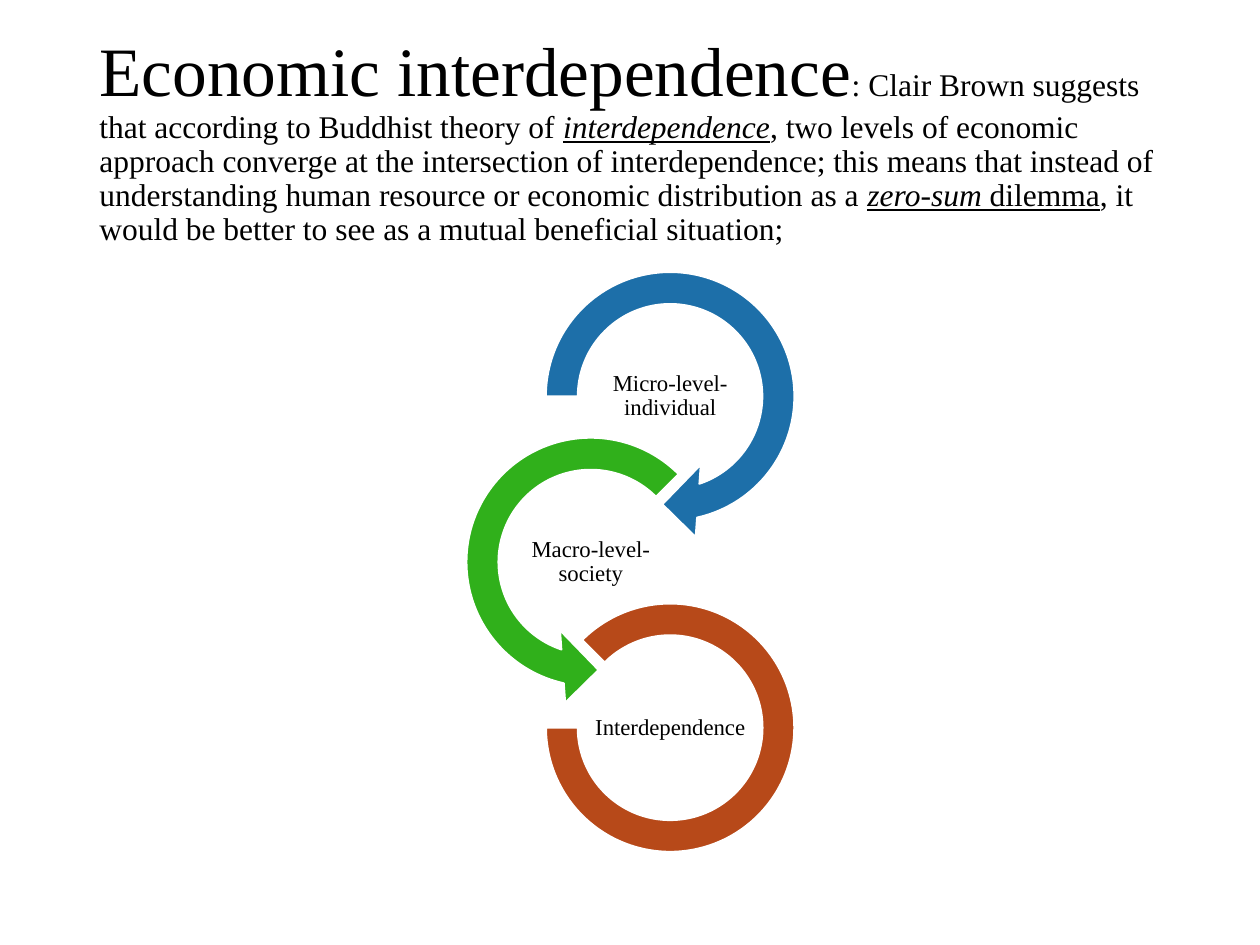
import pptx
import pptx.dml.color
import pptx.enum.shapes
import pptx.enum.text
import pptx.util

Cm, Pt = pptx.util.Cm, pptx.util.Pt
SHAPE = pptx.enum.shapes.MSO_SHAPE
ALIGN = pptx.enum.text.PP_ALIGN
ANCHOR = pptx.enum.text.MSO_ANCHOR

FONT = "Times New Roman"
COLOURS = {"text": "000000", "outline": "FFFFFF",
           "micro": "1D6FA9", "macro": "30B01B", "interdependence": "B74919"}

EMPHASIS = {"italic": True, "underline": True}
TITLE_RUNS = [
    ("Economic interdependence", {"size": Pt(39.6)}),
    (": Clair Brown suggests that according to Buddhist theory of ", {}),
    ("interdependence", EMPHASIS),
    (", two levels of economic approach converge at the intersection of "
     "interdependence; this means that instead of understanding human resource "
     "or economic distribution as a ", {}),
    ("zero-sum", EMPHASIS),
    (" dilemma", {"underline": True}),
    (", it would be better to see as a mutual beneficial situation;", {}),
]

# label, colour, preset, diameter in cm, column (0 left, 1 right), adjustments
LEVELS = [
    ("Micro-level-individual", "micro", SHAPE.CIRCULAR_ARROW, 5.82, 1,
     (0.11, 11.423, 45, 108, 0.125)),
    ("Macro-level-society", "macro", SHAPE.LEFT_CIRCULAR_ARROW, 5.82, 0,
     (0.11, 11.423, 63, 189, 0.125)),
    ("Interdependence", "interdependence", SHAPE.BLOCK_ARC, 5, 1,
     (135, 108, 0.127)),
]


def rgb(name):
    return pptx.dml.color.RGBColor.from_string(COLOURS[name])


def set_attributes(target, values):
    for name, value in values.items():
        setattr(target, name, value)


def add_run(paragraph, text, values):
    run = paragraph.add_run()
    run.text = text
    set_attributes(run.font, {"name": FONT, **values})
    run.font.color.rgb = rgb("text")


def place_title(title, left, top, width, height):
    set_attributes(title, {"left": left, "top": top, "width": width, "height": height})
    set_attributes(title.text_frame, {
        "word_wrap": True, "vertical_anchor": ANCHOR.MIDDLE,
        "auto_size": pptx.enum.text.MSO_AUTO_SIZE.NONE})
    statement = title.text_frame.paragraphs[0]
    set_attributes(statement, {"alignment": ALIGN.LEFT, "line_spacing": 0.9})
    for text, values in TITLE_RUNS:
        add_run(statement, text, {"size": Pt(18), **values})


def add_ring(shapes, preset, centre_x, centre_y, diameter, colour, adjustments):
    ring = shapes.add_shape(preset, centre_x - diameter // 2, centre_y - diameter // 2,
                            diameter, diameter)
    for index, value in enumerate(adjustments):
        ring.adjustments[index] = value
    ring.shadow.inherit = False
    ring.fill.solid()
    ring.fill.fore_color.rgb = rgb(colour)
    ring.line.color.rgb = rgb("outline")
    ring.line.width = Pt(1)


def add_label(shapes, text, centre_x, centre_y):
    width, height = Cm(3.23), Cm(1.63)
    label = shapes.add_textbox(centre_x - width // 2, centre_y - height // 2, width, height)
    margins = {f"margin_{side}": Cm(0.03) for side in ("left", "top", "right", "bottom")}
    set_attributes(label.text_frame, {
        "word_wrap": True, "vertical_anchor": ANCHOR.MIDDLE, **margins})
    caption = label.text_frame.paragraphs[0]
    set_attributes(caption, {"alignment": ALIGN.CENTER, "line_spacing": 0.9})
    add_run(caption, text, {"size": Pt(13)})


def add_level_chain(slide, left, top):
    """Stack the rings downwards, alternating between two columns."""
    radius, column_step, row_step = Cm(2.91), Cm(1.6), Cm(3.34)
    chain = slide.shapes.add_group_shape()
    for row, (text, colour, preset, diameter, column, adjustments) in enumerate(LEVELS):
        centre_x = left + radius + column * column_step
        centre_y = top + radius + row * row_step
        add_ring(chain.shapes, preset, centre_x, centre_y, Cm(diameter), colour, adjustments)
        add_label(chain.shapes, text, centre_x, centre_y)


def main():
    deck = pptx.Presentation()
    set_attributes(deck, {"slide_width": Cm(25.4), "slide_height": Cm(19.05)})
    slide = deck.slides.add_slide(deck.slide_layouts[5])
    place_title(slide.shapes.title, Cm(1.75), Cm(1.02), Cm(21.9), Cm(3.68))
    add_level_chain(slide, Cm(9), Cm(5.08))
    deck.save("out.pptx")


if __name__ == "__main__":
    main()
